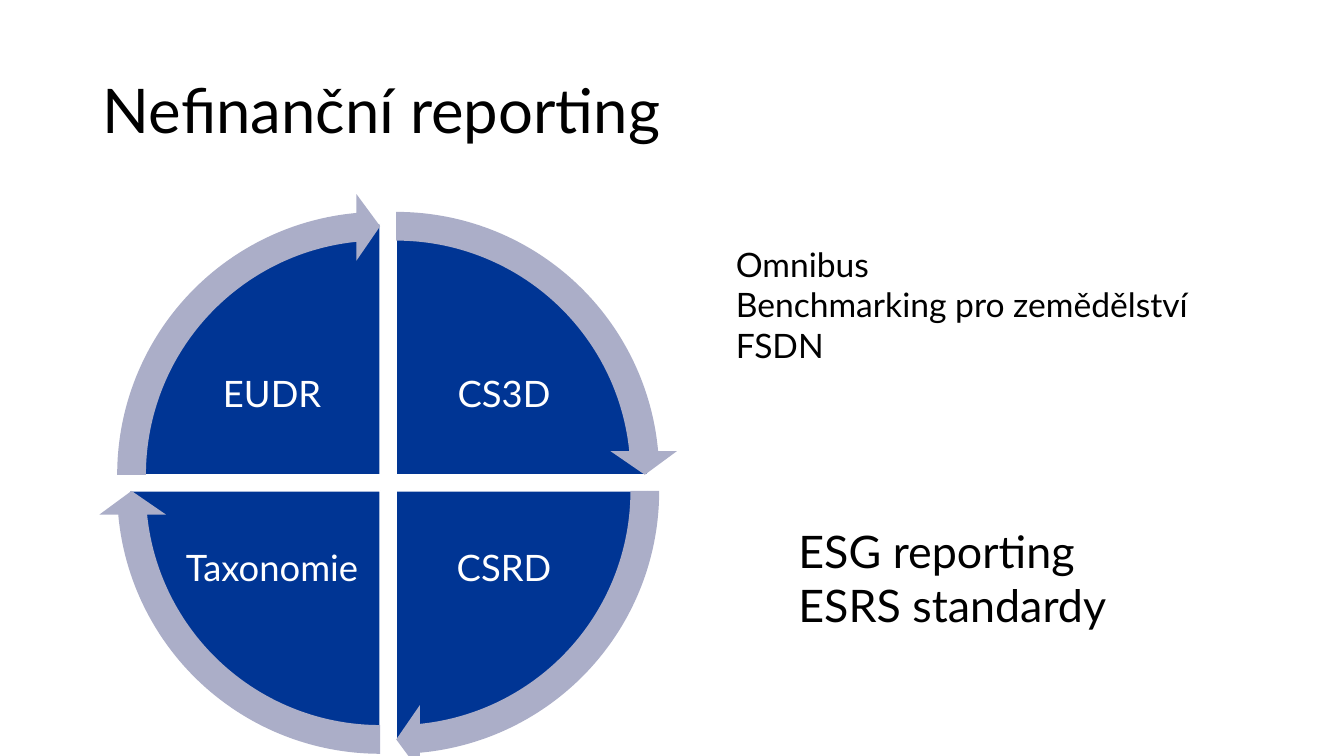
from dataclasses import dataclass

from pptx import Presentation
from pptx import util as u
from pptx.dml.color import RGBColor
from pptx.enum import shapes, text


@dataclass(frozen=True)
class Theme:
    font: str = "Lato"
    ink: RGBColor = RGBColor(0x00, 0x00, 0x00)
    paper: RGBColor = RGBColor(0xFF, 0xFF, 0xFF)
    wedge: RGBColor = RGBColor(0x00, 0x35, 0x94)
    arrow: RGBColor = RGBColor(0xAB, 0xAE, 0xC8)
    title_size: int = 44
    label_size: int = 26
    topics_size: int = 24
    standards_size: int = 32


@dataclass(frozen=True)
class Area:
    left: float
    top: float
    width: float
    height: float

    def lengths(self) -> tuple:
        return tuple(map(u.Inches, (self.left, self.top, self.width, self.height)))


@dataclass(frozen=True)
class Quadrant:
    label: str
    right: int
    down: int
    start: int

    def area(self, shift_x: float, shift_y: float, width: float, height: float) -> Area:
        center_x = CYCLE_X + self.right * shift_x
        center_y = CYCLE_Y + self.down * shift_y
        return Area(center_x - width / 2, center_y - height / 2, width, height)


@dataclass(frozen=True)
class Note:
    area: Area
    lines: tuple[str, ...]
    size: int


THEME = Theme()
CYCLE_X, CYCLE_Y = 3.85, 4.79
GAP = 0.08
PIE_SIZE, ARROW_SIZE = 4.98, 5.59
FULL_TURN, QUARTER_TURN = 216, 54
ARROW_WIDTH, HEAD_ANGLE, HEAD_WIDTH = 0.051, 3.275, 0.059

QUADRANTS = (
    Quadrant("CS3D", 1, -1, 162),
    Quadrant("CSRD", 1, 1, 0),
    Quadrant("Taxonomie", -1, 1, 54),
    Quadrant("EUDR", -1, -1, 108),
)

NOTES = (
    Note(Area(7.2, 2.37, 4.84, 1.31),
         ("Omnibus", "Benchmarking pro zemědělství", "FSDN"), THEME.topics_size),
    Note(Area(7.82, 5.15, 3.59, 1.18),
         ("ESG reporting", "ESRS standardy"), THEME.standards_size),
)


def style(para, size: int, color: RGBColor) -> None:
    para.font.name = THEME.font
    para.font.size = u.Pt(size)
    para.font.color.rgb = color


def add_title(page, words: str) -> None:
    title = page.shapes.title
    title.left, title.top, title.width, title.height = Area(0.92, 0.4, 11.5, 1.45).lengths()
    frame = title.text_frame
    frame.text = words
    frame.vertical_anchor = text.MSO_ANCHOR.MIDDLE
    para = frame.paragraphs[0]
    para.alignment = text.PP_ALIGN.LEFT
    para.line_spacing = 0.9
    style(para, THEME.title_size, THEME.ink)


def add_arc(page, kind, area: Area, color: RGBColor, adjustments: tuple):
    arc = page.shapes.add_shape(kind, *area.lengths())
    arc.shadow.inherit = False
    arc.fill.solid()
    arc.fill.fore_color.rgb = color
    for index, value in enumerate(adjustments):
        arc.adjustments[index] = value
    return arc


def add_wedge(page, quadrant: Quadrant) -> None:
    end = (quadrant.start + QUARTER_TURN) % FULL_TURN
    wedge = add_arc(page, shapes.MSO_SHAPE.PIE, quadrant.area(GAP, GAP, PIE_SIZE, PIE_SIZE),
                    THEME.wedge, (quadrant.start, end))
    wedge.line.color.rgb = THEME.paper
    wedge.line.width = u.Pt(1)


def add_label(page, quadrant: Quadrant) -> None:
    box = page.shapes.add_textbox(*quadrant.area(1.15, 0.86, 1.84, 1.36).lengths())
    frame = box.text_frame
    frame.word_wrap = True
    frame.vertical_anchor = text.MSO_ANCHOR.MIDDLE
    frame.margin_left = frame.margin_right = u.Inches(0.04)
    frame.margin_top = frame.margin_bottom = u.Inches(0.04)
    frame.text = quadrant.label
    para = frame.paragraphs[0]
    para.alignment = text.PP_ALIGN.CENTER
    para.line_spacing = 0.9
    style(para, THEME.label_size, THEME.paper)


def add_arrow(page, quadrant: Quadrant) -> None:
    end = quadrant.start + QUARTER_TURN - HEAD_ANGLE
    arrow = add_arc(page, shapes.MSO_SHAPE.CIRCULAR_ARROW,
                    quadrant.area(GAP, GAP, ARROW_SIZE, ARROW_SIZE), THEME.arrow,
                    (ARROW_WIDTH, HEAD_ANGLE, end, quadrant.start, HEAD_WIDTH))
    arrow.line.fill.background()


def add_note(page, note: Note) -> None:
    box = page.shapes.add_textbox(*note.area.lengths())
    frame = box.text_frame
    frame.word_wrap = True
    frame.auto_size = text.MSO_AUTO_SIZE.SHAPE_TO_FIT_TEXT
    frame.text = "\n".join(note.lines)
    for para in frame.paragraphs:
        style(para, note.size, THEME.ink)


def main() -> None:
    deck = Presentation()
    deck.slide_width, deck.slide_height = u.Inches(13.33), u.Inches(7.5)
    page = deck.slides.add_slide(deck.slide_layouts.get_by_name("Title Only"))
    add_title(page, "Nefinanční reporting")
    for quadrant in QUADRANTS:
        add_wedge(page, quadrant)
        add_label(page, quadrant)
    for quadrant in QUADRANTS:
        add_arrow(page, quadrant)
    for note in NOTES:
        add_note(page, note)
    deck.save("out.pptx")


if __name__ == "__main__":
    main()
